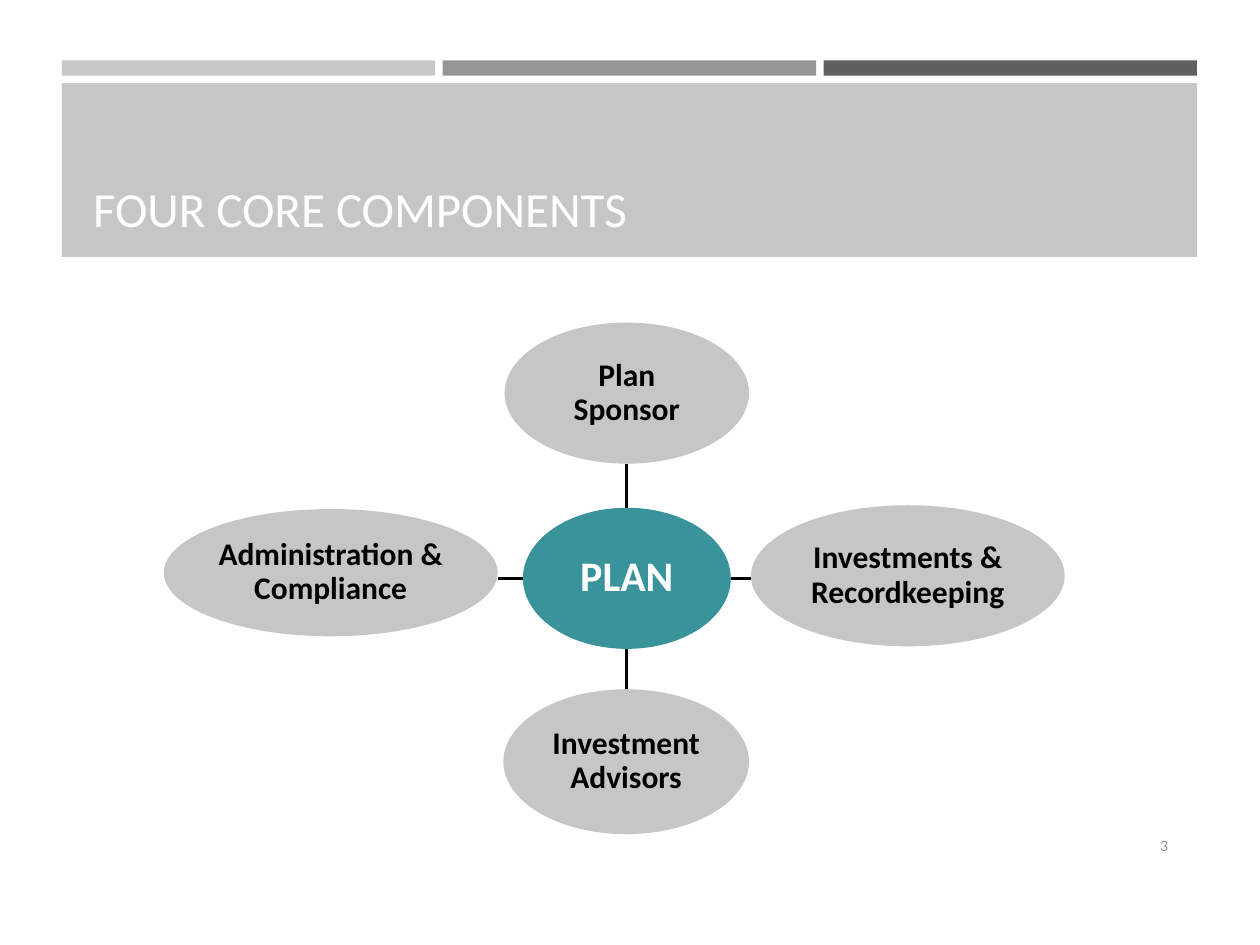
import pptx
import pptx.dml.color
import pptx.enum.shapes
import pptx.enum.text
import pptx.oxml
import pptx.oxml.ns
import pptx.util

Inches = pptx.util.Inches
RGBColor = pptx.dml.color.RGBColor
Anchor = pptx.enum.text.MSO_ANCHOR
Align = pptx.enum.text.PP_ALIGN
Shape = pptx.enum.shapes.MSO_SHAPE

LIGHT_GRAY = RGBColor(0xC6, 0xC6, 0xC6)
MID_GRAY = RGBColor(0x96, 0x96, 0x96)
DARK_GRAY = RGBColor(0x5F, 0x5F, 0x5F)
TEAL = RGBColor(0x38, 0x93, 0x9B)
WHITE = RGBColor(0xFF, 0xFF, 0xFF)
BLACK = RGBColor(0, 0, 0)


def write_text(shape, text, size, color, bold=False, align=Align.LEFT,
               anchor=Anchor.MIDDLE, inset=None, line_spacing=None):
    frame = shape.text_frame
    frame.word_wrap = True
    frame.vertical_anchor = anchor
    if inset is not None:
        frame.margin_left = frame.margin_right = Inches(inset)
        frame.margin_top = frame.margin_bottom = Inches(inset)
    paragraph = frame.paragraphs[0]
    paragraph.alignment = align
    paragraph.line_spacing = line_spacing
    run = paragraph.add_run()
    run.text = text
    run.font.name = "Calibri"
    run.font.size = pptx.util.Pt(size)
    run.font.bold = bold
    run.font.color.rgb = color


def add_filled_shape(slide, kind, box, color):
    shape = slide.shapes.add_shape(kind, *map(Inches, box))
    shape.shadow.inherit = False
    shape.fill.solid()
    shape.fill.fore_color.rgb = color
    shape.line.fill.background()
    return shape


def add_line(slide, start, end):
    connector = slide.shapes.add_connector(
        pptx.enum.shapes.MSO_CONNECTOR.STRAIGHT, *map(Inches, start + end))
    connector.line.color.rgb = BLACK
    connector.line.width = pptx.util.Pt(1.75)
    properties = connector._element.spPr
    properties.append(pptx.oxml.parse_xml(
        "<a:effectLst %s/>" % pptx.oxml.ns.nsdecls("a")))


def add_header(slide, left, top, width, height):
    gap = 0.06
    bar_height = 0.12
    bar_width = (width - 2 * gap) / 3
    for index, color in enumerate((LIGHT_GRAY, MID_GRAY, DARK_GRAY)):
        bar_left = left + index * (bar_width + gap)
        add_filled_shape(slide, Shape.RECTANGLE,
                         (bar_left, top, bar_width, bar_height), color)
    band_top = top + bar_height + gap
    band_height = height - bar_height - gap
    add_filled_shape(slide, Shape.RECTANGLE,
                     (left, band_top, width, band_height), LIGHT_GRAY)
    title = slide.shapes.add_textbox(
        Inches(left + 0.15), Inches(band_top + 0.09),
        Inches(width - 0.27), Inches(band_height - 0.2))
    write_text(title, "FOUR CORE COMPONENTS", 28, WHITE, anchor=Anchor.BOTTOM)


def add_node(slide, text, box, fill, size, color):
    node = add_filled_shape(slide, Shape.OVAL, box, fill)
    write_text(node, text, size, color, bold=True, align=Align.CENTER,
               inset=0.03, line_spacing=0.9)


def add_plan_diagram(slide, left, top, width, height):
    right, bottom = left + width, top + height
    hub_left, hub_top, hub_width, hub_height = left + 2.85, top + 1.47, 1.65, 1.12
    hub_right, hub_bottom = hub_left + hub_width, hub_top + hub_height
    center_x = hub_left + hub_width / 2
    center_y = hub_top + hub_height / 2
    add_node(slide, "PLAN", (hub_left, hub_top, hub_width, hub_height),
             TEAL, 24, WHITE)
    components = (
        ("Plan Sponsor", (center_x - 0.97, top, 1.94, 1.12),
         (center_x, hub_top), (center_x, top + 1.12)),
        ("Investments & Recordkeeping", (right - 2.49, top + 1.45, 2.49, 1.12),
         (hub_right, center_y), (right - 2.49, center_y)),
        ("Investment Advisors", (center_x - 0.98, bottom - 1.15, 1.95, 1.15),
         (center_x, hub_bottom), (center_x, bottom - 1.15)),
        ("Administration & Compliance", (left, top + 1.48, 2.65, 1.01),
         (hub_left, center_y), (left + 2.65, center_y)),
    )
    for text, box, start, end in components:
        add_line(slide, start, end)
        add_node(slide, text, box, LIGHT_GRAY, 18, BLACK)


def add_page_number(slide, left, top, width, height):
    number = slide.shapes.add_textbox(*map(Inches, (left, top, width, height)))
    write_text(number, "3", 9, MID_GRAY, align=Align.RIGHT)


def main():
    presentation = pptx.Presentation()
    presentation.slide_width = Inches(10)
    presentation.slide_height = Inches(7.5)
    slide = presentation.slides.add_slide(presentation.slide_layouts[6])
    add_header(slide, 0.49, 0.48, 9.01, 1.56)
    add_plan_diagram(slide, 1.3, 2.56, 7.15, 4.06)
    add_page_number(slide, 8.53, 6.51, 0.84, 0.4)
    presentation.save("out.pptx")


if __name__ == "__main__":
    main()
